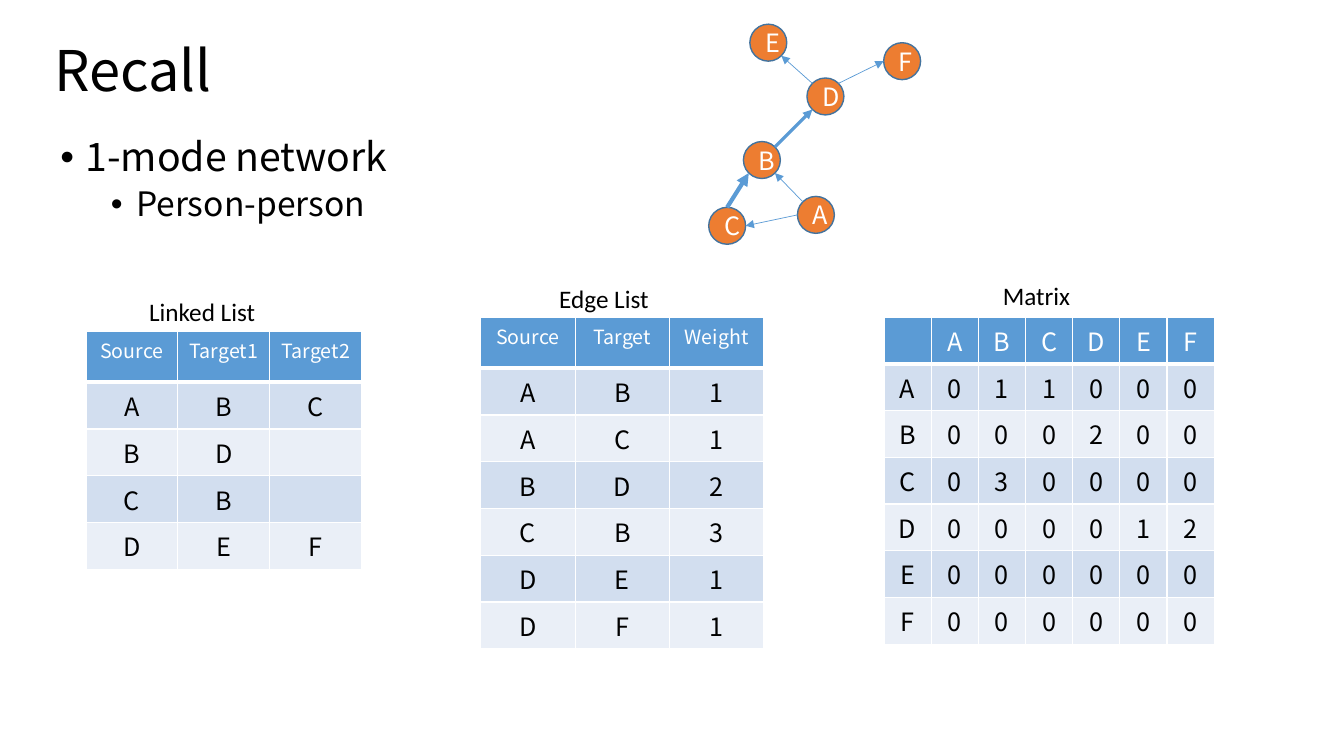
from math import cos, radians, sin

from lxml import etree
from pptx import Presentation
from pptx.dml.color import RGBColor
from pptx.enum.shapes import MSO_CONNECTOR, MSO_SHAPE
from pptx.enum.text import MSO_ANCHOR, MSO_AUTO_SIZE, PP_ALIGN
from pptx.oxml.ns import qn
from pptx.util import Pt

LINE, OVAL = MSO_CONNECTOR.STRAIGHT, MSO_SHAPE.OVAL
LEFT, MID = PP_ALIGN.LEFT, PP_ALIGN.CENTER
TOP, HALF = MSO_ANCHOR.TOP, MSO_ANCHOR.MIDDLE
FIXED, GROW = MSO_AUTO_SIZE.NONE, MSO_AUTO_SIZE.SHAPE_TO_FIT_TEXT

NOTO, SANS = "Noto Sans CJK KR", "Calibri"
BLACK, WHITE, BLUE = "000000", "FFFFFF", "5B9BD5"
ORANGE, RIM = "ED7D31", "43739E"
BANDS = ("D2DEEF", "EAEFF7")
ROW = 33.4

# Node centres inside the graph box
NODES = {"E": (42.6, 13.2), "D": (83.4, 51.6), "F": (138.2, 26.4),
         "B": (38, 97), "A": (76.6, 136.2), "C": (13.2, 144)}
# Start, its site, end, its site, width; sites run anticlockwise from the top
EDGES = [("A", 2, "C", 6, 0.5), ("C", 0, "B", 3, 3), ("A", 1, "B", 5, 0.5),
         ("B", 7, "D", 3, 2.25), ("D", 7, "F", 2, 0.5), ("D", 1, "E", 5, 0.5)]

LINKED = [("Source", "Target1", "Target2"), "ABC", "BD ", "CB ", "DEF"]
PAIRS = [("Source", "Target", "Weight"),
         "AB1", "AC1", "BD2", "CB3", "DE1", "DF1"]
MATRIX = [" ABCDEF", "A011000", "B000200", "C030000",
          "D000012", "E000000", "F000000"]


def color(code):
    return RGBColor.from_string(code)


def apply(item, **vals):
    for name, val in vals.items():
        setattr(item, name, val)


def place(shape, box):
    apply(shape, **dict(zip(("left", "top", "width", "height"), map(Pt, box))))


def write(para, text, size, code=BLACK, face=NOTO, align=LEFT, **vals):
    apply(para, alignment=align, **vals)
    run = para.add_run()
    run.text = text
    apply(run.font, size=Pt(size), name=face, bold=False)
    run.font.color.rgb = color(code)


def paint(fill, code):
    fill.solid()
    fill.fore_color.rgb = color(code)


def title(slide, box):
    shape = slide.shapes.title
    place(shape, box)
    apply(shape.text_frame, vertical_anchor=HALF, auto_size=FIXED)
    write(shape.text_frame.paragraphs[0], "Recall", 40, line_spacing=0.9)


def bullets(slide, box, items):
    shape = slide.placeholders[1]
    place(shape, box)
    frame = shape.text_frame
    apply(frame, vertical_anchor=TOP, auto_size=FIXED)
    for level, (text, size, gap, indent) in enumerate(items):
        para = frame.add_paragraph() if level else frame.paragraphs[0]
        write(para, text, size, level=level, line_spacing=0.9,
              space_before=Pt(gap))
        props = para._p.get_or_add_pPr()
        props.set("marL", str(Pt(indent)))
        props.set("indent", str(Pt(-18)))
        etree.SubElement(props, qn("a:buFont"), typeface="Arial")
        etree.SubElement(props, qn("a:buChar"), char="•")


def graph(slide, box):
    left, top, size = box
    spots = {name: (left + x, top + y) for name, (x, y) in NODES.items()}

    def site(name, step):
        x, y = spots[name]
        turn = radians(90 + 45 * step)
        return (Pt(x + size / 2 * cos(turn)), Pt(y - size / 2 * sin(turn)))

    # Circles
    for name, (x, y) in spots.items():
        node = slide.shapes.add_shape(
            OVAL, Pt(x - size / 2), Pt(y - size / 2), Pt(size), Pt(size))
        node.shadow.inherit = False
        paint(node.fill, ORANGE)
        paint(node.line.fill, RIM)
        node.line.width = Pt(1)
        write(node.text_frame.paragraphs[0], name, 18, WHITE, align=MID)

    # Arrows
    for start, out, end, into, width in EDGES:
        arrow = slide.shapes.add_connector(
            LINE, *site(start, out), *site(end, into))
        paint(arrow.line.fill, BLUE)
        arrow.line.width = Pt(width)
        etree.SubElement(arrow.line._get_or_add_ln(), qn("a:tailEnd"),
                         type="triangle")
        etree.SubElement(arrow._element.spPr, qn("a:effectLst"))


def border(cell, base):
    props = cell._tc.get_or_add_tcPr()
    for side, width in zip("LRTB", (1, 1, 1, base)):
        line = etree.SubElement(props, qn("a:ln" + side), w=str(Pt(width)))
        fill = etree.SubElement(line, qn("a:solidFill"))
        etree.SubElement(fill, qn("a:srgbClr"), val=WHITE)


def grid(slide, box, rows, head, size):
    left, top, width = box
    count = len(rows[0])
    tall = head + ROW * (len(rows) - 1)
    table = slide.shapes.add_table(len(rows), count, Pt(left), Pt(top),
                                   Pt(width), Pt(tall)).table
    for col in table.columns:
        col.width = Pt(width / count)
    for i, row in enumerate(rows):
        table.rows[i].height = Pt(ROW if i else head)
        for j, text in enumerate(row):
            cell = table.cell(i, j)
            border(cell, 1 if i else 3)
            paint(cell.fill, BANDS[(i - 1) % 2] if i else BLUE)
            if text.strip():
                write(cell.text_frame.paragraphs[0], text, 18 if i else size,
                      BLACK if i else WHITE, align=MID)


def panel(slide, box, name, shift, rows, head, size):
    left, top, _ = box
    dx, dy, wide = shift
    label = slide.shapes.add_textbox(
        Pt(left + dx), Pt(top - dy), Pt(wide), Pt(29))
    apply(label.text_frame, word_wrap=False, auto_size=GROW)
    write(label.text_frame.paragraphs[0], name, 18, face=SANS)
    grid(slide, box, rows, head, size)


def main():
    deck = Presentation()
    apply(deck, slide_width=Pt(960), slide_height=Pt(540))
    slide = deck.slides.add_slide(deck.slide_layouts[1])
    title(slide, (31.7, 18.7, 479, 67.7))
    bullets(slide, (36, 95, 304, 88), [("1-mode network", 28, 10, 18),
                                       ("Person-person", 24, 5, 54)])
    graph(slide, (506.2, 17.3, 26.4))
    panel(slide, (61.4, 236.4, 197), "Linked List", (38, 28.2, 91.4),
          LINKED, 36.7, 14)
    panel(slide, (343.4, 226.4, 202.3), "Edge List", (49, 27.6, 79.2),
          PAIRS, 36.7, 14)
    panel(slide, (631.4, 226.4, 236), "Matrix", (77.8, 29.8, 63.4),
          MATRIX, ROW, 18)
    deck.save("out.pptx")


if __name__ == "__main__":
    main()
